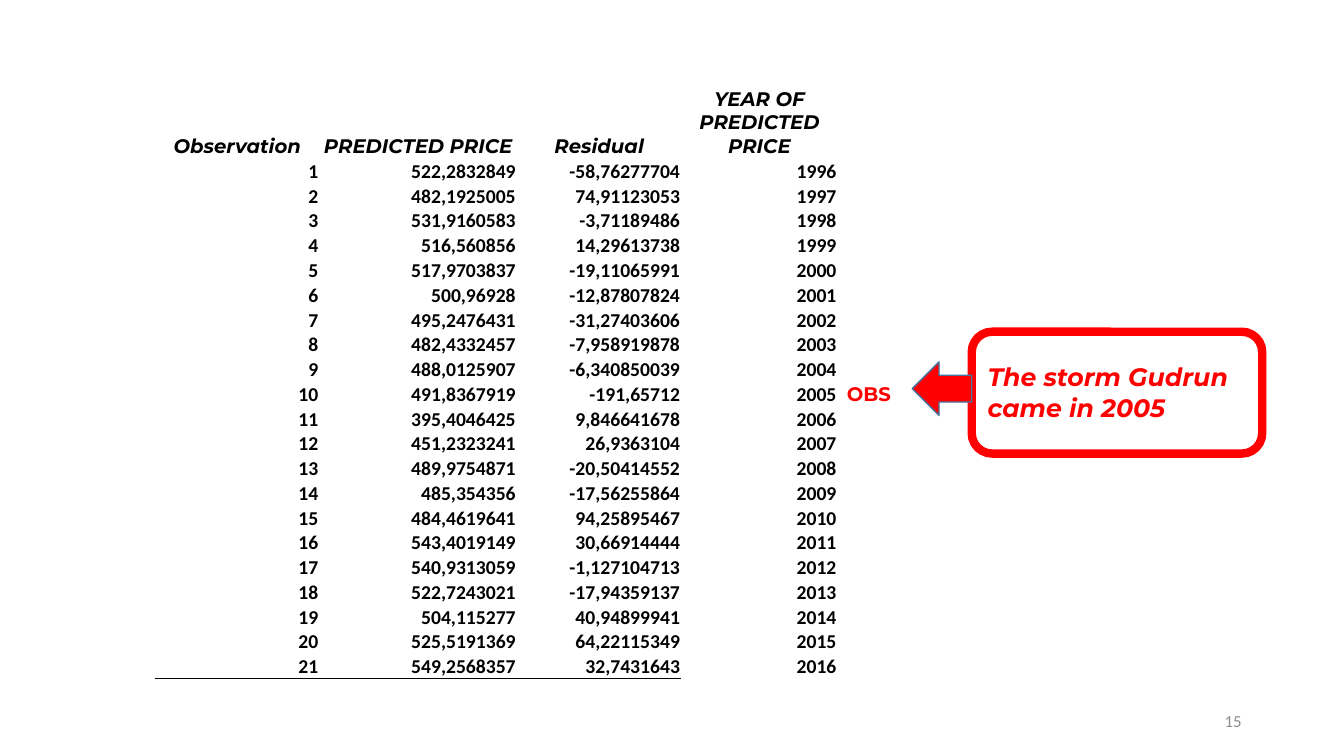
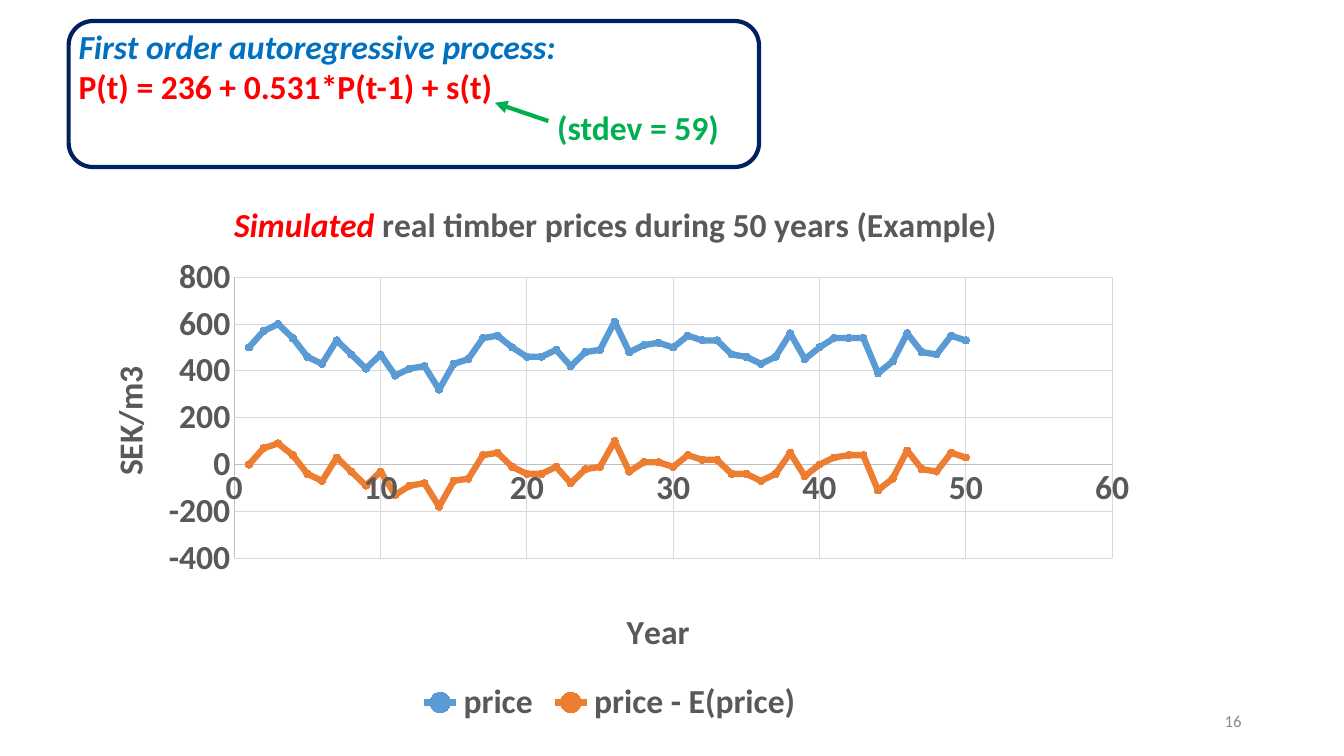
from dataclasses import dataclass

from lxml import etree
from pptx import Presentation
from pptx.chart.data import XyChartData
from pptx.dml.color import RGBColor
from pptx.enum import chart as charts, shapes, text
from pptx.oxml import ns, parse_xml
from pptx.util import Cm, Pt


@dataclass(frozen=True)
class Theme:
    body: str = "Calibri"
    display: str = "Montserrat"
    black: str = "000000"
    red: str = "FF0000"
    blue: str = "0070C0"
    navy: str = "002060"
    green: str = "00B050"
    arrow_edge: str = "43739E"
    grey: str = "8C8C8C"
    chart_text: str = "595959"
    axis: str = "BFBFBF"
    grid: str = "D9D9D9"
    series: tuple = ("5B9BD5", "ED7D31")
    small: int = 12
    table: int = 14
    callout: int = 18
    large: int = 24


T = Theme()

HEADINGS = ["Observation", "PREDICTED PRICE", "Residual", "YEAR OF PREDICTED PRICE"]
FIRST_YEAR = 1996
PREDICTIONS = [
    ("522,2832849", "-58,76277704"), ("482,1925005", "74,91123053"),
    ("531,9160583", "-3,71189486"), ("516,560856", "14,29613738"),
    ("517,9703837", "-19,11065991"), ("500,96928", "-12,87807824"),
    ("495,2476431", "-31,27403606"), ("482,4332457", "-7,958919878"),
    ("488,0125907", "-6,340850039"), ("491,8367919", "-191,65712"),
    ("395,4046425", "9,846641678"), ("451,2323241", "26,9363104"),
    ("489,9754871", "-20,50414552"), ("485,354356", "-17,56255864"),
    ("484,4619641", "94,25895467"), ("543,4019149", "30,66914444"),
    ("540,9313059", "-1,127104713"), ("522,7243021", "-17,94359137"),
    ("504,115277", "40,94899941"), ("525,5191369", "64,22115349"),
    ("549,2568357", "32,7431643"),
]
STORM_YEAR, STORM_MARK = 2005, "OBS"
STORM_NOTE = ["The storm Gudrun", "came in 2005"]

# Text, colour, italic, left indent in cm
PROCESS = [
    ("First order autoregressive process:", T.blue, True, 0),
    ("P(t) = 236 + 0.531*P(t-1) + s(t)", T.red, False, 0),
    ("(stdev = 59)", T.green, False, 12.06),
]
CHART_TITLE = [("Simulated", T.red, True),
               (" real timber prices during 50 years (Example)", T.chart_text, False)]
PRICES = {
    "price": [
        500, 570, 600, 540, 460, 430, 530, 470, 410, 470, 380, 410, 420, 320, 430, 450, 540,
        550, 500, 460, 460, 490, 420, 480, 490, 610, 480, 510, 520, 500, 550, 530, 530, 470,
        460, 430, 460, 560, 450, 500, 540, 540, 540, 390, 440, 560, 480, 470, 550, 530],
    "price - E(price)": [
        0, 70, 90, 40, -40, -70, 30, -30, -90, -30, -130, -90, -80, -180, -70, -60, 40,
        50, -10, -40, -40, -10, -80, -20, -10, 100, -30, 10, 10, -10, 40, 20, 20, -40,
        -40, -70, -40, 50, -50, 0, 30, 40, 40, -110, -60, 60, -20, -30, 50, 30],
}


def rgb(color):
    return RGBColor.from_string(color)


def style(font, size, color, name=T.body, bold=True, italic=False):
    font.size, font.name, font.bold, font.italic = Pt(size), name, bold, italic
    font.color.rgb = rgb(color)


def add_run(paragraph, words, *args, **kwargs):
    run = paragraph.add_run()
    run.text = words
    style(run.font, *args, **kwargs)


def paragraphs(frame, count):
    return [frame.paragraphs[0]] + [frame.add_paragraph() for _ in range(count - 1)]


def add_text_frame(slide, box, wrap=True):
    frame = slide.shapes.add_textbox(*map(Cm, box)).text_frame
    frame.word_wrap = wrap
    return frame


def set_line(line, color, width):
    line.color.rgb = rgb(color)
    line.width = Pt(width)


def add_outline(slide, kind, box, color, width, fill=None):
    shape = slide.shapes.add_shape(kind, *map(Cm, box))
    shape.shadow.inherit = False
    set_line(shape.line, color, width)
    if fill:
        shape.fill.solid()
        shape.fill.fore_color.rgb = rgb(fill)
    else:
        shape.fill.background()


def new_slide(prs, number):
    slide = prs.slides.add_slide(prs.slide_layouts[6])
    frame = add_text_frame(slide, (23.92, 17.65, 7.62, 1.02))
    frame.vertical_anchor = text.MSO_ANCHOR.MIDDLE
    frame.paragraphs[0].alignment = text.PP_ALIGN.RIGHT
    add_run(frame.paragraphs[0], str(number), T.small, T.grey, bold=False)
    return slide


def rule_below(cell, width):
    cell._tc.get_or_add_tcPr().insert(0, parse_xml(
        f'<a:lnB {ns.nsdecls("a")} w="{Pt(width)}"><a:solidFill>'
        f'<a:srgbClr val="{T.black}"/></a:solidFill></a:lnB>'))


def add_prediction_table(slide):
    widths = [4.14, 4.98, 4.14, 3.94, 3.89]
    row_height, header_height, spacer_rows = 0.62, 1.84, 2
    header = spacer_rows
    rows = [[""] * 5] * spacer_rows + [HEADINGS + [""]]
    for i, (price, residual) in enumerate(PREDICTIONS):
        year = FIRST_YEAR + i
        mark = STORM_MARK if year == STORM_YEAR else ""
        rows.append([str(i + 1), price, residual, str(year), mark])
    heights = [header_height if r == header else row_height for r in range(len(rows))]
    rules = {header - 1: 1, header: 0.5, len(rows) - 1: 1}

    table = slide.shapes.add_table(len(rows), len(widths), Cm(3.91), Cm(0.91),
                                   Cm(sum(widths)), Cm(sum(heights))).table
    table.first_row = table.horz_banding = False
    for column, width in zip(table.columns, widths):
        column.width = Cm(width)
    for r, values in enumerate(rows):
        table.rows[r].height = Cm(heights[r])
        for c, value in enumerate(values):
            cell = table.cell(r, c)
            cell.fill.background()
            cell.vertical_anchor = text.MSO_ANCHOR.BOTTOM
            cell.margin_left = cell.margin_right = cell.margin_top = Cm(0.03)
            cell.margin_bottom = 0
            if r in rules and c < 3:
                rule_below(cell, rules[r])
            paragraph = cell.text_frame.paragraphs[0]
            if not value:
                etree.SubElement(paragraph._p, ns.qn("a:endParaRPr"), sz=str(T.table * 100))
            elif r == header:
                paragraph.alignment = text.PP_ALIGN.CENTER
                add_run(paragraph, value, T.table, T.black, T.display, italic=True)
            elif value == STORM_MARK:
                cell.margin_left = Cm(0.23)
                add_run(paragraph, value, T.table, T.red, T.display)
            else:
                paragraph.alignment = text.PP_ALIGN.RIGHT
                add_run(paragraph, value, T.table, T.black)


def build_predictions(prs):
    slide = new_slide(prs, 15)
    add_prediction_table(slide)
    note = add_text_frame(slide, (24.64, 8.99, 6.88, 1.8), wrap=False)
    for paragraph, words in zip(paragraphs(note, len(STORM_NOTE)), STORM_NOTE):
        add_run(paragraph, words, T.callout, T.red, T.display, italic=True)
    kinds = shapes.MSO_SHAPE
    add_outline(slide, kinds.ROUNDED_RECTANGLE, (24.49, 8.36, 7.32, 3.07), T.red, 6)
    add_outline(slide, kinds.LEFT_ARROW, (22.99, 9.12, 1.5, 1.35), T.arrow_edge, 1, T.red)


def layout_xml(x, y, w=None, h=None):
    """Manual chart layout in fractions of the chart; with a size it places the inner plot."""
    parts = '<c:layoutTarget val="inner"/>' if w else ""
    parts += '<c:xMode val="edge"/><c:yMode val="edge"/>'
    for tag, value in zip("xywh", (x, y, w, h)):
        if value is not None:
            parts += f'<c:{tag} val="{value}"/>'
    return parse_xml(f'<c:layout {ns.nsdecls("c")}><c:manualLayout>{parts}'
                     '</c:manualLayout></c:layout>')


def write_title(title, runs, x, y):
    for words, color, italic in runs:
        add_run(title.text_frame.paragraphs[0], words, T.large, color, italic=italic)
    element = title._element
    for old in element.findall(ns.qn("c:layout")):
        element.remove(old)
    element.find(ns.qn("c:tx")).addnext(layout_xml(x, y))


def format_axis(axis, low, high, step, name, x, y):
    axis.minimum_scale, axis.maximum_scale, axis.major_unit = low, high, step
    axis.major_tick_mark = axis.minor_tick_mark = charts.XL_TICK_MARK.NONE
    axis.has_major_gridlines = True
    set_line(axis.major_gridlines.format.line, T.grid, 0.75)
    set_line(axis.format.line, T.axis, 0.75)
    style(axis.tick_labels.font, T.large, T.chart_text)
    write_title(axis.axis_title, [(name, T.chart_text, False)], x, y)


def add_price_chart(slide):
    data = XyChartData()
    for name, values in PRICES.items():
        series = data.add_series(name)
        for year, value in enumerate(values, 1):
            series.add_data_point(year, value)
    chart = slide.shapes.add_chart(charts.XL_CHART_TYPE.XY_SCATTER_LINES,
                                   Cm(1.73), Cm(4.5), Cm(27.28), Cm(13.89), data).chart
    style(chart.font, 10, T.black, bold=False)
    write_title(chart.chart_title, CHART_TITLE, 0.15, 0.04)
    format_axis(chart.category_axis, 0, 60, 10, "Year", 0.51, 0.77)
    format_axis(chart.value_axis, -400, 800, 200, "SEK/m3", 0.03, 0.33)

    chart.has_legend = True
    chart.legend.position = charts.XL_LEGEND_POSITION.BOTTOM
    chart.legend.include_in_layout = False
    style(chart.legend.font, T.large, T.chart_text)

    plot = chart.plots[0]
    plot.vary_by_categories = False
    for series, color in zip(plot.series, T.series):
        series.smooth = False
        set_line(series.format.line, color, 4.5)
        marker = series.marker
        marker.style, marker.size = charts.XL_MARKER_STYLE.CIRCLE, 5
        marker.format.fill.solid()
        marker.format.fill.fore_color.rgb = rgb(color)
        set_line(marker.format.line, color, 0.75)

    area = chart._chartSpace.chart.plotArea
    for old in area.findall(ns.qn("c:layout")):
        area.remove(old)
    area.insert(0, layout_xml(0.153, 0.179, 0.811, 0.51))


def add_arrow(slide, start, end, color, width):
    arrow = slide.shapes.add_connector(shapes.MSO_CONNECTOR.STRAIGHT,
                                       *map(Cm, start + end))
    set_line(arrow.line, color, width)
    etree.SubElement(arrow.line._get_or_add_ln(), ns.qn("a:tailEnd"), type="triangle")
    etree.SubElement(arrow._element.spPr, ns.qn("a:effectLst"))


def build_simulation(prs):
    slide = new_slide(prs, 16)
    add_price_chart(slide)
    process = add_text_frame(slide, (1.73, 0.53, 19.23, 3.33))
    for paragraph, (words, color, italic, indent) in zip(
            paragraphs(process, len(PROCESS)), PROCESS):
        paragraph._p.get_or_add_pPr().set("marL", str(Cm(indent)))
        add_run(paragraph, words, T.large, color, italic=italic)
    add_arrow(slide, (13.82, 3.05), (12.47, 2.59), T.green, 3)
    add_outline(slide, shapes.MSO_SHAPE.ROUNDED_RECTANGLE,
                (1.73, 0.53, 17.4, 3.68), T.navy, 3)


def main():
    prs = Presentation()
    prs.slide_width, prs.slide_height = Cm(33.87), Cm(19.05)
    build_predictions(prs)
    build_simulation(prs)
    prs.save("out.pptx")


if __name__ == "__main__":
    main()
